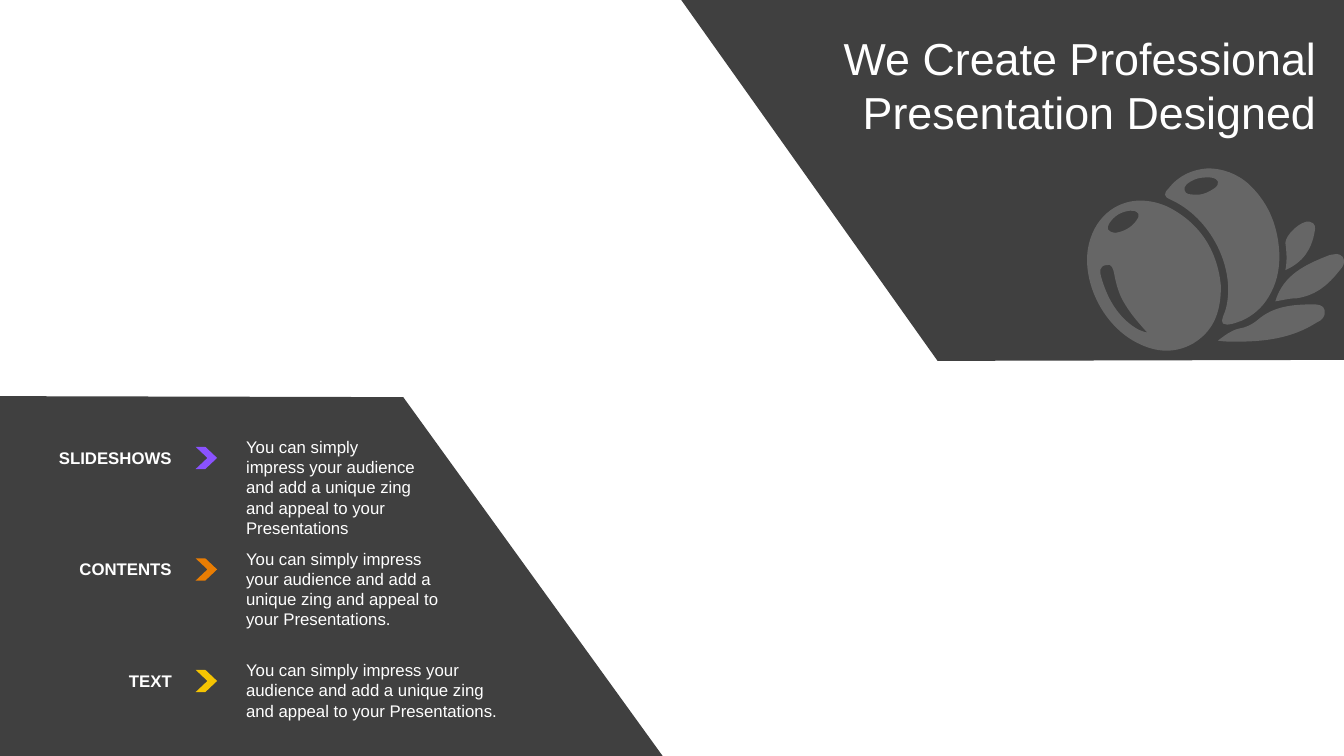
from lxml import etree
from pptx import Presentation
from pptx.dml.color import RGBColor
from pptx.enum.shapes import MSO_SHAPE
from pptx.enum.text import MSO_ANCHOR, MSO_AUTO_SIZE, PP_ALIGN
from pptx.oxml.ns import qn
from pptx.util import Cm, Pt

CHEVRON = MSO_SHAPE.CHEVRON
TOP = MSO_ANCHOR.TOP
NO_FIT = MSO_AUTO_SIZE.NONE
LEFT, RIGHT = PP_ALIGN.LEFT, PP_ALIGN.RIGHT

THEME = {
    "font": "Arial", "title": 32, "body": 12,
    "panel": "404040", "light": "FFFFFF", "fruit_alpha": 20,
    "accents": ("8A52FF", "E97D03", "F5C402"),
}
UNIT = Cm(2.54) / 100  # outline coordinates are hundredths of an inch


def write_text(sp, box, text, size=THEME["body"], bold=False, align=LEFT,
               margins=(0.25, 0.13, 0.25, 0.13)):
    """Place a text shape (box and margins in cm) and fill it with one paragraph."""
    sp.left, sp.top, sp.width, sp.height = map(Cm, box)
    tf = sp.text_frame
    tf.word_wrap, tf.auto_size, tf.vertical_anchor = True, NO_FIT, TOP
    tf.margin_left, tf.margin_top, tf.margin_right, tf.margin_bottom = map(Cm, margins)
    p = tf.paragraphs[0]
    p.alignment, p.line_spacing, p.space_before = align, 1.0, Pt(0)
    r = p.add_run()
    r.text = text
    r.font.name, r.font.size, r.font.bold = THEME["font"], Pt(size), bold
    r.font.color.rgb = RGBColor.from_string(THEME["light"])


def draw_outline(shapes, contours, color):
    """Draw closed contours as one filled freeform without an outline."""
    builder = shapes.build_freeform(*contours[0][0], scale=UNIT)
    for i, points in enumerate(contours):
        if i:
            builder.move_to(*points[0])
        builder.add_line_segments(points[1:], close=True)
    sp = builder.convert_to_shape()
    sp.shadow.inherit = False
    sp.line.fill.background()
    sp.fill.solid()
    sp.fill.fore_color.rgb = RGBColor.from_string(color)
    return sp


prs = Presentation()
prs.slide_width, prs.slide_height = Cm(33.86), Cm(19.05)
slide = prs.slides.add_slide(prs.slide_layouts[5])
shapes = slide.shapes

# Dark slanted panels
for panel in (
    [(0, 393), (400, 394), (658, 751), (0, 751)],
    [(1333, 357), (930, 358), (675, -1), (1333, -1)],
):
    draw_outline(shapes, [panel], THEME["panel"])

# Label, description and chevron rows
ROW_TOP, ROW_PITCH = 10.88, 2.81
DESCRIPTION = "You can simply impress your audience and add a unique zing and appeal to your Presentations"
rows = [
    ("SLIDESHOWS", DESCRIPTION, 4.85, 2.82),
    ("CONTENTS", DESCRIPTION + ".", 5.64, 2.31),
    ("TEXT", DESCRIPTION + ".", 7.01, 1.8),
]
for i, (label, description, width, height) in enumerate(rows):
    y = ROW_TOP + i * ROW_PITCH
    row = shapes.add_group_shape().shapes
    write_text(row.add_textbox(0, 0, 0, 0), (0.36, y + 0.27, 4.22, 0.79), label,
               bold=True, align=RIGHT)
    write_text(row.add_textbox(0, 0, 0, 0), (5.95, y, width, height), description)
    sp = row.add_shape(CHEVRON, Cm(4.93), Cm(y + 0.38), Cm(0.54), Cm(0.56))
    sp.adjustments[0] = 0.55
    sp.shadow.inherit = False
    sp.line.fill.background()
    sp.fill.solid()
    sp.fill.fore_color.rgb = RGBColor.from_string(THEME["accents"][i])

# Title, brought in front of its panel
title = shapes.title
write_text(title, (18.47, 0.77, 14.78, 2.74), "We Create Professional Presentation Designed",
           size=THEME["title"], align=RIGHT, margins=(0.13, 0, 0.08, 0))
shapes._spTree.append(title._element)

# Each contour is a start point, then cubic curves of three points each
leaves = [
    [(1302, 302), (1306, 302), (1313, 302), (1314, 308), (1315, 314), (1311, 318), (1306, 320),
     (1281, 336), (1254, 339), (1225, 339), (1220, 339), (1215, 339), (1208, 338),
     (1216, 332), (1221, 328), (1229, 326), (1236, 325), (1242, 322), (1248, 317),
     (1263, 304), (1282, 302), (1302, 302)],
    [(1326, 252), (1328, 252), (1330, 253), (1332, 255), (1335, 260), (1332, 265), (1329, 268),
     (1318, 282), (1306, 293), (1286, 296), (1278, 296), (1272, 298), (1265, 299),
     (1273, 272), (1296, 262), (1319, 253), (1321, 253), (1323, 252), (1326, 252)],
    [(1299, 220), (1305, 221), (1305, 226), (1304, 230), (1301, 247), (1293, 260), (1275, 268),
     (1277, 258), (1276, 249), (1275, 241), (1275, 233), (1291, 218), (1299, 220)],
]
fruits = [
    [(1097, 263), (1090, 264), (1091, 270), (1092, 274), (1097, 292), (1105, 308), (1119, 320),
     (1124, 324), (1129, 328), (1138, 330), (1129, 320), (1122, 312), (1116, 302),
     (1110, 293), (1107, 282), (1105, 271), (1104, 267), (1103, 261), (1097, 263)],
    [(1121, 209), (1112, 210), (1105, 214), (1100, 222), (1097, 227), (1099, 230), (1106, 231),
     (1114, 230), (1122, 226), (1127, 219), (1129, 217), (1130, 214), (1129, 212),
     (1127, 209), (1124, 209), (1121, 209)],
    [(1131, 199), (1140, 199), (1149, 201), (1158, 205), (1192, 222), (1208, 251), (1211, 284),
     (1211, 311), (1203, 329), (1183, 341), (1163, 352), (1143, 349), (1124, 338),
     (1093, 320), (1074, 280), (1079, 247), (1084, 217), (1106, 199), (1131, 199)],
    [(1197, 176), (1191, 176), (1186, 177), (1181, 180), (1178, 182), (1174, 184), (1175, 189),
     (1176, 193), (1181, 193), (1184, 193), (1190, 194), (1196, 192), (1201, 189),
     (1204, 187), (1209, 185), (1208, 180), (1206, 176), (1201, 176), (1197, 176)],
    [(1198, 167), (1212, 167), (1227, 172), (1239, 183), (1260, 203), (1268, 227), (1269, 253),
     (1269, 269), (1266, 282), (1258, 295), (1252, 305), (1243, 313), (1232, 318),
     (1226, 320), (1218, 324), (1213, 321), (1210, 318), (1215, 311), (1216, 306),
     (1226, 266), (1201, 216), (1161, 198), (1154, 195), (1154, 192), (1159, 187),
     (1169, 174), (1183, 168), (1198, 167)],
]
icon = shapes.add_group_shape().shapes
for contours in (leaves, fruits):
    sp = draw_outline(icon, contours, THEME["light"])
    color = sp.fill._xPr.find(".//" + qn("a:srgbClr"))
    etree.SubElement(color, qn("a:alpha")).set("val", str(THEME["fruit_alpha"] * 1000))
    # Join every three line segments into one cubic curve
    lines = list(sp._element.iter(qn("a:lnTo")))
    for k in range(0, len(lines), 3):
        curve = etree.Element(qn("a:cubicBezTo"))
        lines[k].addprevious(curve)
        for line in lines[k:k + 3]:
            curve.append(line[0])
            line.getparent().remove(line)

prs.save("out.pptx")
